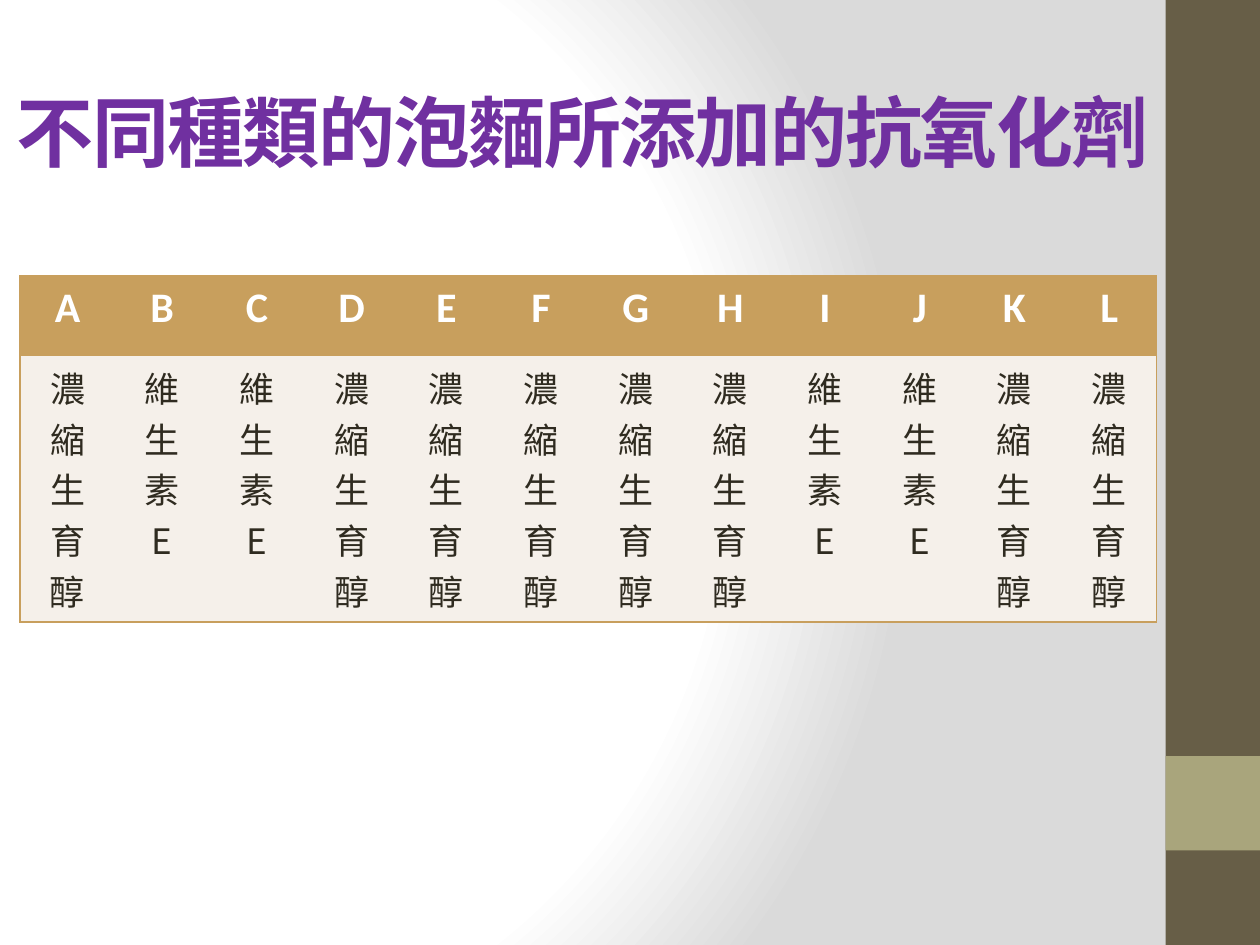
from lxml import etree
from pptx import Presentation
from pptx.dml.color import RGBColor
from pptx.enum.shapes import MSO_SHAPE
from pptx.enum.text import MSO_ANCHOR, MSO_AUTO_SIZE, PP_ALIGN
from pptx.oxml import parse_xml
from pptx.oxml.ns import nsdecls, qn
from pptx.util import Inches, Pt

RECTANGLE = MSO_SHAPE.RECTANGLE
CENTER = PP_ALIGN.CENTER
MIDDLE = MSO_ANCHOR.MIDDLE
NO_AUTOFIT = MSO_AUTO_SIZE.NONE
TITLE_ONLY_LAYOUT = 5

COLORS = {
    "white": "FFFFFF",
    "gray": "DADADA",
    "brown": "675E47",
    "olive": "A9A57C",
    "gold": "C89F5D",
    "cream": "F5F0EA",
    "ink": "2F2B20",
    "purple": "7030A0",
}
LATIN_FONT = "Calibri"
CHINESE_FONT = "Noto Sans CJK SC"

NOODLES = "ABCDEFGHIJKL"
VITAMIN_E_NOODLES = "BCIJ"
VITAMIN_E = "維生素\nE"
TOCOPHEROL = "濃縮生育醇"


class SlideBuilder:
    def __init__(self, presentation):
        layout = presentation.slide_layouts[TITLE_ONLY_LAYOUT]
        self.slide = presentation.slides.add_slide(layout)

    def color(self, name):
        return RGBColor.from_string(COLORS[name])

    def background(self, stops):
        stop_xml = "".join(
            f'<a:gs pos="{position * 1000}"><a:srgbClr val="{COLORS[name]}"/></a:gs>'
            for position, name in stops
        )
        background = parse_xml(
            f'<p:bg {nsdecls("p", "a")}><p:bgPr><a:gradFill rotWithShape="1">'
            f'<a:gsLst>{stop_xml}</a:gsLst><a:path path="circle">'
            '<a:fillToRect l="20000" t="50000" r="100000" b="50000"/></a:path>'
            "</a:gradFill><a:effectLst/></p:bgPr></p:bg>"
        )
        self.slide.element.cSld.insert(0, background)

    def format_paragraph(self, paragraph, font_name, size, color, bold, spacing=0):
        paragraph.alignment = CENTER
        font = paragraph.font
        font.name = font_name
        font.size = Pt(size)
        font.bold = bold
        font.color.rgb = self.color(color)
        properties = paragraph._p.pPr.find(qn("a:defRPr"))
        if spacing:
            properties.set("spc", str(spacing * 100))
        east_asian = etree.Element(qn("a:ea"), typeface=CHINESE_FONT)
        properties.find(qn("a:latin")).addnext(east_asian)

    def title(self, text, left, top, width, height):
        title = self.slide.shapes.title
        title.left, title.top = Inches(left), Inches(top)
        title.width, title.height = Inches(width), Inches(height)
        frame = title.text_frame
        frame.text = text
        frame.word_wrap = True
        frame.auto_size = NO_AUTOFIT
        frame.vertical_anchor = MIDDLE
        self.format_paragraph(frame.paragraphs[0], CHINESE_FONT, 44, "purple", True, -1)

    def rectangle(self, color, left, top, width, height):
        shape = self.slide.shapes.add_shape(
            RECTANGLE, Inches(left), Inches(top), Inches(width), Inches(height)
        )
        shape.shadow.inherit = False
        shape.fill.solid()
        shape.fill.fore_color.rgb = self.color(color)
        shape.line.fill.background()

    def cell_borders(self, cell, sides, color):
        properties = cell._tc.get_or_add_tcPr()
        for index, side in enumerate(("L", "R", "T", "B")):
            fill = "<a:noFill/>"
            if side in sides:
                fill = f'<a:solidFill><a:srgbClr val="{COLORS[color]}"/></a:solidFill>'
            border = f'<a:ln{side} {nsdecls("a")} w="12700">{fill}</a:ln{side}>'
            properties.insert(index, parse_xml(border))

    def table(self, rows, styles, left, top, width, heights):
        columns = len(rows[0])
        table = self.slide.shapes.add_table(
            len(rows), columns, Inches(left), Inches(top),
            Inches(width), Inches(sum(heights)),
        ).table
        for column in table.columns:
            column.width = Inches(width / columns)
        for row_index, (texts, style) in enumerate(zip(rows, styles)):
            fill, font_name, size, color, bold = style
            table.rows[row_index].height = Inches(heights[row_index])
            for column_index, text in enumerate(texts):
                cell = table.cell(row_index, column_index)
                cell.text = text
                cell.fill.solid()
                cell.fill.fore_color.rgb = self.color(fill)
                for paragraph in cell.text_frame.paragraphs:
                    self.format_paragraph(paragraph, font_name, size, color, bold)
                sides = "TB"
                if column_index == 0:
                    sides += "L"
                if column_index == columns - 1:
                    sides += "R"
                self.cell_borders(cell, sides, "gold")


def main():
    presentation = Presentation()
    presentation.slide_width = Inches(10)
    presentation.slide_height = Inches(7.5)

    builder = SlideBuilder(presentation)
    builder.background([(0, "white"), (75, "white"), (100, "gray")])
    builder.rectangle("brown", 9.25, 0, 0.75, 7.5)
    builder.rectangle("olive", 9.25, 6, 0.75, 0.75)
    builder.title("不同種類的泡麵所添加的抗氧化劑", 0, 0.3, 9.25, 1.48)

    antioxidants = [
        VITAMIN_E if noodle in VITAMIN_E_NOODLES else TOCOPHEROL for noodle in NOODLES
    ]
    header_style = ("gold", LATIN_FONT, 24, "white", True)
    body_style = ("cream", CHINESE_FONT, 20, "ink", False)
    builder.table(
        [NOODLES, antioxidants], [header_style, body_style], 0.16, 2.19, 9.02, [0.63, 1.27]
    )
    presentation.save("out.pptx")


if __name__ == "__main__":
    main()
